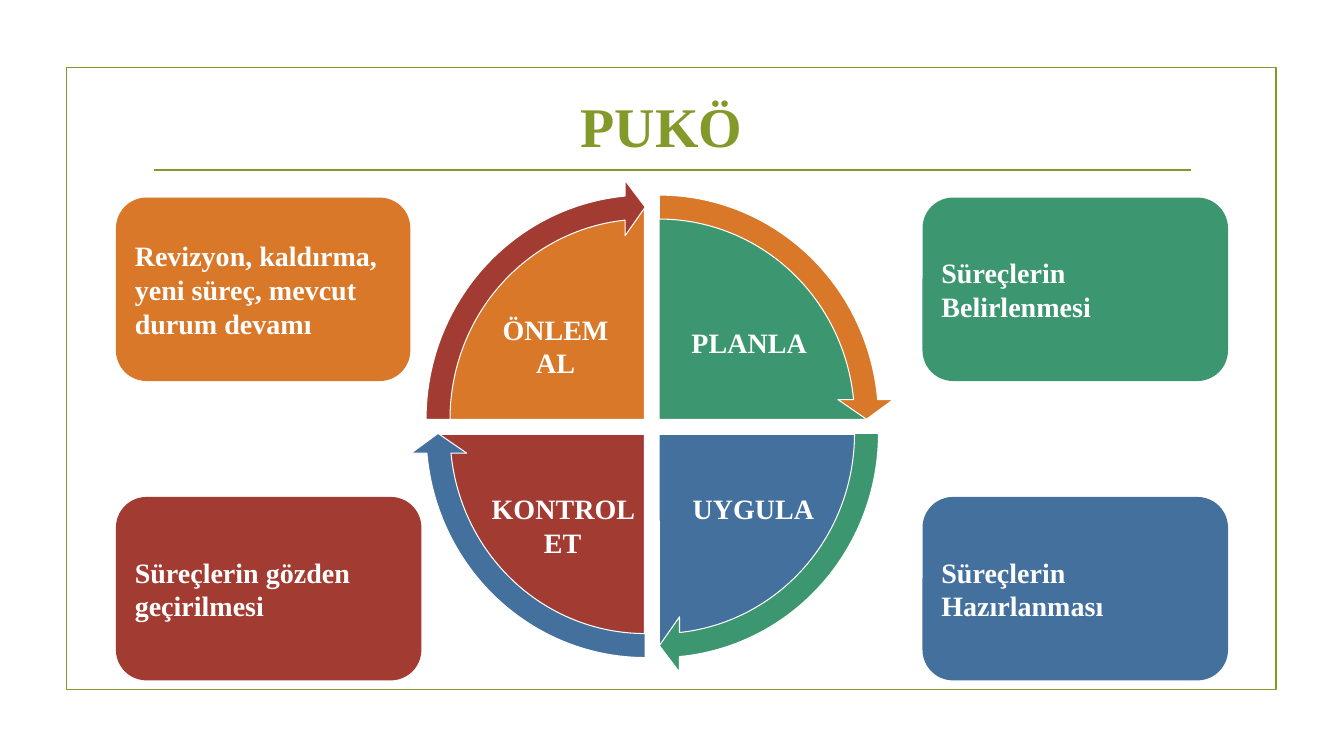
from dataclasses import dataclass

from lxml import etree
from pptx import Presentation
from pptx.dml.color import RGBColor
from pptx.enum.shapes import MSO_CONNECTOR, MSO_SHAPE
from pptx.enum.text import MSO_ANCHOR, MSO_AUTO_SIZE, PP_ALIGN
from pptx.oxml.ns import qn
from pptx.util import Inches, Pt

RECT, ROUND = MSO_SHAPE.RECTANGLE, MSO_SHAPE.ROUNDED_RECTANGLE
PIE, ARROW = MSO_SHAPE.PIE, MSO_SHAPE.CIRCULAR_ARROW
LEFT, CENTER = PP_ALIGN.LEFT, PP_ALIGN.CENTER
MIDDLE = MSO_ANCHOR.MIDDLE
GROW = MSO_AUTO_SIZE.SHAPE_TO_FIT_TEXT
STRAIGHT = MSO_CONNECTOR.STRAIGHT


@dataclass(frozen=True)
class Theme:
    font: str = "Times New Roman"
    title: int = 40
    body: int = 20
    white: str = "FFFFFF"
    olive: str = "83992A"
    green: str = "3C9770"
    blue: str = "44709D"
    red: str = "A23C33"
    orange: str = "D97828"


THEME = Theme()

# Angles are in the units of the preset shapes: a quarter turn is 54
QUARTER, FULL = 54, 216
SWEEP = 50.725

# Per step, clockwise from top right: column, row, wedge colour, arrow colour
STEPS = [
    (1, 0, THEME.green, THEME.orange),
    (1, 1, THEME.blue, THEME.green),
    (0, 1, THEME.red, THEME.blue),
    (0, 0, THEME.orange, THEME.red),
]
LABELS = [
    ("PLANLA", (6.76, 3.18, 1.78, 0.44), LEFT),
    ("UYGULA", (6.77, 4.83, 1.78, 0.44), LEFT),
    ("KONTROL ET", (4.69, 4.83, 1.78, 0.77), CENTER),
    ("ÖNLEM\nAL", (4.62, 3.05, 1.78, 0.77), CENTER),
]
CARDS = [
    ("Revizyon, kaldırma, yeni süreç, mevcut durum devamı",
     1.15, 1.96, 2.92, THEME.orange),
    ("Süreçlerin Belirlenmesi", 9.15, 1.96, 3.03, THEME.green),
    ("Süreçlerin Hazırlanması", 9.15, 4.93, 3.03, THEME.blue),
    ("Süreçlerin gözden geçirilmesi", 1.15, 4.93, 3.03, THEME.red),
]


def color(code):
    return RGBColor.from_string(code)


def inches(box):
    return [Inches(v) for v in box]


def write(frame, text, size, tint, align):
    frame.word_wrap = True
    frame.text = text
    for para in frame.paragraphs:
        para.alignment = align
        font = para.font
        font.name, font.size, font.bold = THEME.font, Pt(size), True
        font.color.rgb = color(tint)


def add_shape(slide, kind, box, fill=None, line=None, width=1.25, adjust=()):
    shape = slide.shapes.add_shape(kind, *inches(box))
    shape.shadow.inherit = False
    if fill:
        shape.fill.solid()
        shape.fill.fore_color.rgb = color(fill)
    else:
        shape.fill.background()
    if line:
        shape.line.color.rgb = color(line)
        shape.line.width = Pt(width)
    else:
        shape.line.fill.background()
    for i, value in enumerate(adjust):
        shape.adjustments[i] = value
    return shape


def add_rule(slide, ends):
    rule = slide.shapes.add_connector(STRAIGHT, *inches(ends))
    rule.line.color.rgb = color(THEME.olive)
    rule.line.width = Pt(1.25)
    etree.SubElement(rule._element.spPr, qn("a:effectLst"))


def add_title(slide, text):
    title = slide.shapes.title
    title.left, title.top, title.width, title.height = inches(
        (1.31, 0.53, 10.5, 1.43))
    title.text_frame.vertical_anchor = MIDDLE
    write(title.text_frame, text, THEME.title, THEME.olive, CENTER)


def add_label(slide, text, box, align):
    label = slide.shapes.add_textbox(*inches(box))
    write(label.text_frame, text, THEME.body, THEME.white, align)
    label.text_frame.auto_size = GROW


def add_card(slide, text, left, top, width, fill):
    card = add_shape(slide, ROUND, (left, top, width, 1.82), fill)
    card.text_frame.vertical_anchor = MIDDLE
    write(card.text_frame, text, THEME.body, THEME.white, LEFT)


def add_cycle(slide):
    gap = 0.14
    starts = [(3 + i) * QUARTER % FULL for i in range(len(STEPS))]
    # Quarter wedges
    for start, (col, row, fill, _) in zip(starts, STEPS):
        box = (4.32 + col * gap, 2.05 + row * gap, 4.15, 4.23)
        add_shape(slide, PIE, box, fill, THEME.white,
                  adjust=(start, (start + QUARTER) % FULL))
    # Arrows around the rim
    for start, (col, row, _, fill) in zip(starts, STEPS):
        box = (4.07 + col * gap, 1.78 + row * gap, 4.66, 4.76)
        add_shape(slide, ARROW, box, fill, THEME.white, 0.75,
                  (0.051, 3.275, start + SWEEP, start, 0.059))


def main():
    deck = Presentation()
    deck.slide_width, deck.slide_height = Inches(13.33), Inches(7.5)
    slide = deck.slides.add_slide(deck.slide_layouts[5])

    # Frame and heading
    add_shape(slide, RECT, (0.66, 0.67, 12, 6.17), line=THEME.olive)
    add_rule(slide, (1.53, 1.69, 11.81, 1.69))
    add_title(slide, "PUKÖ")

    # Cycle with its labels and cards
    add_cycle(slide)
    for label in LABELS:
        add_label(slide, *label)
    for card in CARDS:
        add_card(slide, *card)

    deck.save("out.pptx")


if __name__ == "__main__":
    main()
